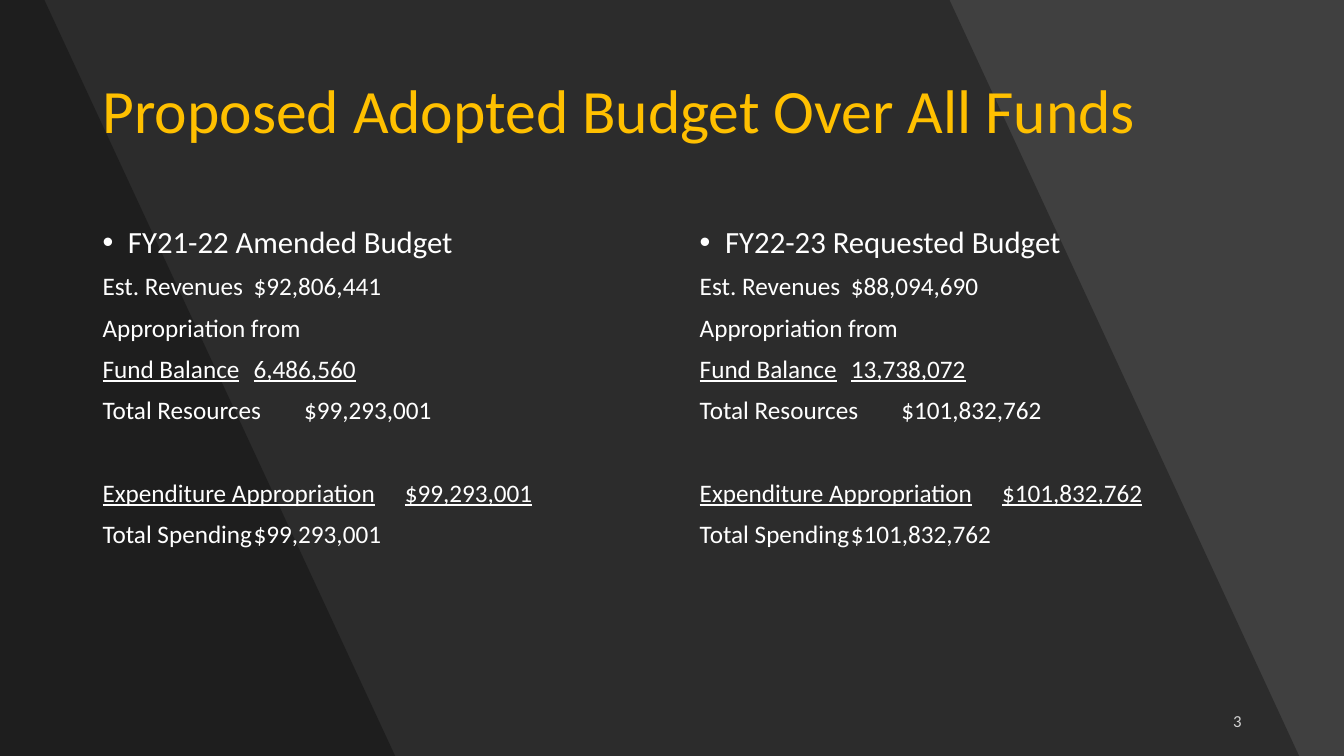
from pptx import Presentation
from pptx.dml.color import RGBColor
from pptx.enum.text import MSO_ANCHOR, MSO_AUTO_SIZE, PP_ALIGN
from pptx.oxml.ns import qn
from pptx.util import Cm, Pt

TITLE = "Proposed Adopted Budget Over All Funds"
LABELS = ["Est. Revenues", "Appropriation from", "Fund Balance", "Total Resources",
          "Expenditure Appropriation", "Total Spending"]
BUDGETS = [
    ("FY21-22 Amended Budget",
     ["$92,806,441", "", "6,486,560", "$99,293,001", "$99,293,001", "$99,293,001"]),
    ("FY22-23 Requested Budget",
     ["$88,094,690", "", "13,738,072", "$101,832,762", "$101,832,762", "$101,832,762"]),
]
UNDERLINED = {"Fund Balance", "Expenditure Appropriation"}
SECTION_START = "Expenditure Appropriation"
PAGE_NUMBER = "3"

FONT = "Calibri"
BACKGROUND = RGBColor(0x40, 0x40, 0x40)
BLACK = RGBColor(0, 0, 0)
WHITE = RGBColor(0xFF, 0xFF, 0xFF)
GOLD = RGBColor(0xFF, 0xC0, 0x00)

WIDTH, HEIGHT = Cm(33.87), Cm(19.05)
MARGIN = Cm(2.33)
COLUMN_WIDTH, COLUMN_STEP = Cm(14.15), Cm(15.05)
AMOUNT_TAB = Cm(7.62)
BULLET_INDENT = Cm(0.64)
BANDS = [(Cm(23.93), Cm(32.74)), (Cm(1.12), Cm(9.96))]  # top and bottom right corners


def place(shape, left, top, width, height):
    shape.left, shape.top, shape.width, shape.height = left, top, width, height


def set_opacity(shape, percent):
    for color in shape.element.iter(qn("a:srgbClr")):
        color.makeelement(qn("a:alpha"))
        alpha = color.makeelement(qn("a:alpha"), {"val": str(percent * 1000)})
        color.append(alpha)


def add_text(p, text, color, **font):
    r = p.add_run()
    r.text = text
    r.font.color.rgb = color
    for name, value in {"name": FONT, **font}.items():
        setattr(r.font, name, value)


def format_paragraph(p, bullet=False, space_before=Pt(10)):
    p.line_spacing = 0.9
    p.space_before = space_before
    pPr = p._p.get_or_add_pPr()
    indent = BULLET_INDENT if bullet else 0
    pPr.set("marL", str(indent))
    pPr.set("indent", str(-indent))
    if bullet:
        pPr.append(pPr.makeelement(qn("a:buChar"), {"char": "•"}))
    else:
        pPr.append(pPr.makeelement(qn("a:buNone")))
        tabs = pPr.makeelement(qn("a:tabLst"))
        tabs.append(tabs.makeelement(qn("a:tab"), {"pos": str(AMOUNT_TAB), "algn": "l"}))
        pPr.append(tabs)


def add_band(s, top_right, bottom_right):
    builder = s.shapes.build_freeform(0, 0)
    builder.add_line_segments([(top_right, 0), (bottom_right, HEIGHT), (0, HEIGHT)])
    band = builder.convert_to_shape()
    band.shadow.inherit = False
    band.fill.solid()
    band.fill.fore_color.rgb = BLACK
    band.line.fill.background()
    set_opacity(band, 30)
    s.shapes.title.element.addprevious(band.element)  # behind the text


def fill_budget(body, heading, amounts):
    tf = body.text_frame
    tf.auto_size = MSO_AUTO_SIZE.NONE
    p = tf.paragraphs[0]
    format_paragraph(p, bullet=True)
    add_text(p, heading, WHITE, size=Pt(22))
    for label, amount in zip(LABELS, amounts):
        p = tf.add_paragraph()
        format_paragraph(p, space_before=Pt(39.5 if label == SECTION_START else 10))
        text = f"{label}\t{amount}" if amount else label
        add_text(p, text, WHITE, size=Pt(18), underline=label in UNDERLINED)


def main():
    prs = Presentation()
    prs.slide_width, prs.slide_height = WIDTH, HEIGHT
    s = prs.slides.add_slide(prs.slide_layouts.get_by_name("Two Content"))
    s.background.fill.solid()
    s.background.fill.fore_color.rgb = BACKGROUND
    for corners in BANDS:
        add_band(s, *corners)

    title = s.shapes.title
    place(title, MARGIN, Cm(1.01), Cm(29.21), Cm(3.68))
    title.text_frame.auto_size = MSO_AUTO_SIZE.NONE
    title.text_frame.vertical_anchor = MSO_ANCHOR.MIDDLE
    p = title.text_frame.paragraphs[0]
    p.alignment, p.line_spacing = PP_ALIGN.LEFT, 0.9
    add_text(p, TITLE, GOLD, size=Pt(44))

    for i, (heading, amounts) in enumerate(BUDGETS):
        body = s.placeholders[i + 1]
        place(body, MARGIN + i * COLUMN_STEP, Cm(5.59), COLUMN_WIDTH, Cm(11.58))
        fill_budget(body, heading, amounts)

    number = s.shapes.add_textbox(Cm(23.92), Cm(17.66), Cm(7.62), Cm(1.01))
    tf = number.text_frame
    tf.word_wrap = True
    tf.vertical_anchor = MSO_ANCHOR.MIDDLE
    p = tf.paragraphs[0]
    p.alignment, p.space_after = PP_ALIGN.RIGHT, Pt(6)
    add_text(p, PAGE_NUMBER, WHITE, size=Pt(12))
    set_opacity(number, 80)

    prs.save("out.pptx")


if __name__ == "__main__":
    main()
